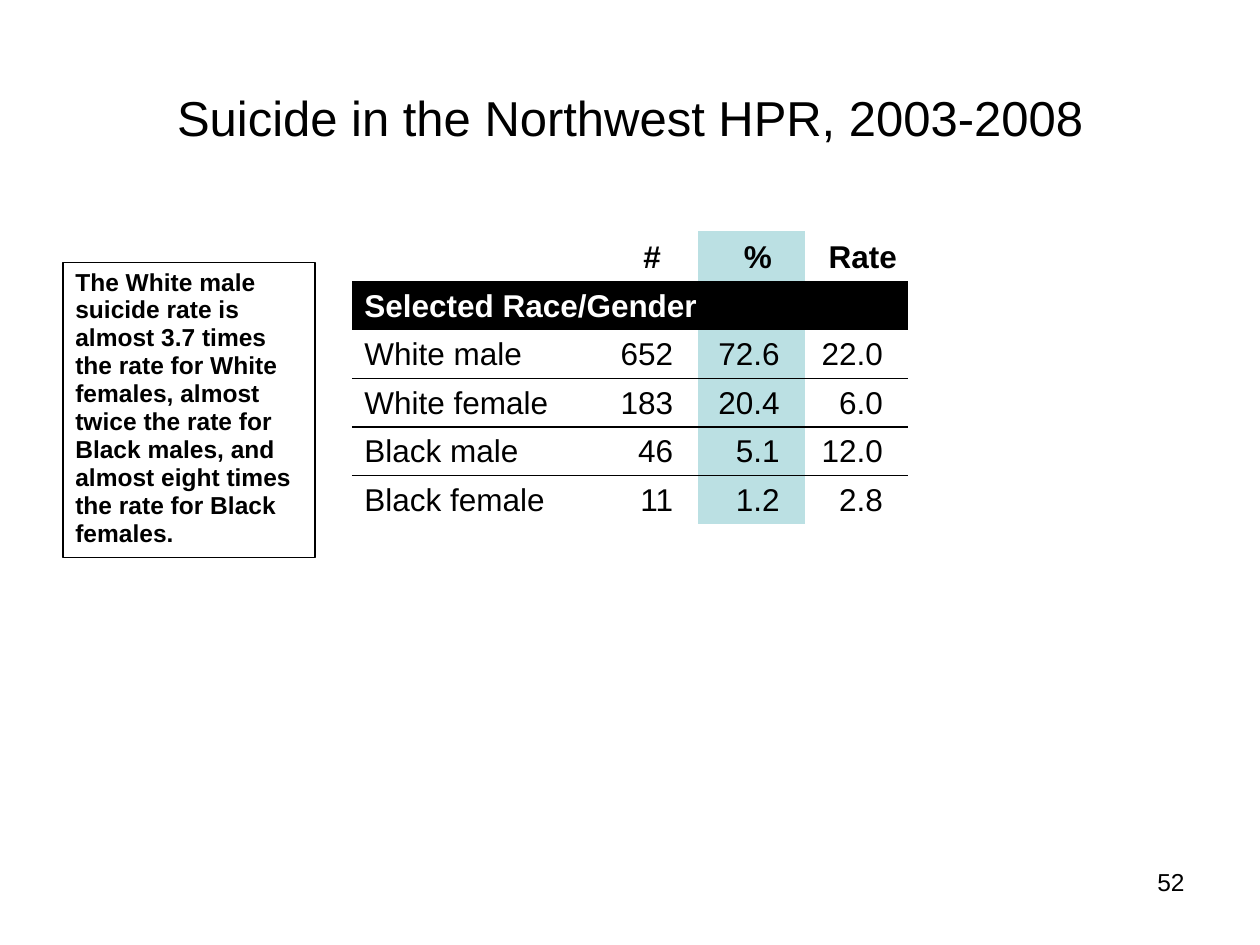
from dataclasses import dataclass

from lxml.etree import SubElement
from pptx import Presentation
from pptx.dml.color import RGBColor
from pptx.enum.shapes import MSO_SHAPE
from pptx.enum.text import MSO_ANCHOR, PP_ALIGN
from pptx.oxml.ns import qn
from pptx.util import Pt

COLORS = {"ink": "000000", "paper": "FFFFFF", "highlight": "BBE0E3"}
FONT = "Arial"
NO_STYLE_NO_GRID = "{2D5ABB26-0587-4C30-8999-92F81FD0307C}"
COLUMN_WIDTHS = [138, 60, 61, 59]
HEADER_HEIGHT, ROW_HEIGHT = 15, 21.6
PERCENT_COLUMN = 2


@dataclass
class Group:
    name: str
    count: str
    percent: str
    rate: str


@dataclass
class TextStyle:
    size: float
    bold: bool = False
    color: str = "ink"
    align: PP_ALIGN = PP_ALIGN.LEFT
    tight: bool = False


HEADINGS = ["", "#", "%", "Rate"]
GROUPS = [
    Group("White male", "652", "72.6", "22.0"),
    Group("White female", "183", "20.4", "6.0"),
    Group("Black male", "46", "5.1", "12.0"),
    Group("Black female", "11", "1.2", "2.8"),
]


def rgb(name: str) -> RGBColor:
    return RGBColor.from_string(COLORS[name])


def write(frame, text: str, style: TextStyle) -> None:
    paragraph = frame.paragraphs[0]
    paragraph.text = text
    paragraph.alignment = style.align
    font = paragraph.font
    font.name, font.size, font.bold = FONT, Pt(style.size), style.bold
    font.color.rgb = rgb(style.color)
    if style.tight:
        paragraph.line_spacing = 0.95
        paragraph.space_before = Pt(0)
        # Space before as a share of the line: 10 %
        before = paragraph.space_before is not None and paragraph._p.pPr.find(qn("a:spcBef"))
        before.clear()
        SubElement(before, qn("a:spcPct"), val="10000")


def add_label(slide, box: tuple, text: str, style: TextStyle, anchor: MSO_ANCHOR) -> None:
    frame = slide.shapes.add_textbox(*map(Pt, box)).text_frame
    frame.word_wrap = True
    frame.vertical_anchor = anchor
    write(frame, text, style)


def fill_cell(cell, text: str, style: TextStyle, right: float, fill: str | None) -> None:
    cell.vertical_anchor = MSO_ANCHOR.BOTTOM
    cell.margin_left, cell.margin_right = Pt(7.2), Pt(right)
    cell.margin_top = cell.margin_bottom = Pt(3.6)
    if text:
        write(cell.text_frame, text, style)
    if fill:
        cell.fill.solid()
        cell.fill.fore_color.rgb = rgb(fill)
    else:
        cell.fill.background()


def add_border(cell, side: str) -> None:
    line = SubElement(cell._tc.get_or_add_tcPr(), qn(f"a:{side}"), w=str(Pt(1)))
    solid = SubElement(line, qn("a:solidFill"))
    SubElement(solid, qn("a:srgbClr"), val=COLORS["ink"])
    # Borders come before the fill in the cell properties
    cell._tc.tcPr.insert(0, line)


def add_rate_table(slide) -> None:
    frame = slide.shapes.add_table(
        len(GROUPS) + 2, len(COLUMN_WIDTHS), Pt(201), Pt(132), Pt(sum(COLUMN_WIDTHS)),
        Pt(HEADER_HEIGHT + ROW_HEIGHT * (len(GROUPS) + 1)))
    table = frame.table
    table.first_row = table.horz_banding = False
    table._tbl.tblPr.find(qn("a:tableStyleId")).text = NO_STYLE_NO_GRID
    for column, width in zip(table.columns, COLUMN_WIDTHS):
        column.width = Pt(width)
    for index, row in enumerate(table.rows):
        row.height = Pt(ROW_HEIGHT if index else HEADER_HEIGHT)

    # Column headings
    heading = TextStyle(18, bold=True, align=PP_ALIGN.CENTER, tight=True)
    for col, text in enumerate(HEADINGS):
        fill = "highlight" if col == PERCENT_COLUMN else None
        fill_cell(table.cell(0, col), text, heading, 0, fill)

    # Section band
    band = table.cell(1, 0)
    band.merge(table.cell(1, len(COLUMN_WIDTHS) - 1))
    fill_cell(band, "Selected Race/Gender",
              TextStyle(18, bold=True, color="paper", tight=True), 0, "ink")

    # One row for each group, with rules between them
    for row, group in enumerate(GROUPS, start=2):
        values = [group.name, group.count, group.percent, group.rate]
        for col, text in enumerate(values):
            cell = table.cell(row, col)
            align = PP_ALIGN.RIGHT if col else PP_ALIGN.LEFT
            fill = "highlight" if col == PERCENT_COLUMN else None
            fill_cell(cell, text, TextStyle(18, align=align, tight=True), 14.4, fill)
            if group is not GROUPS[-1]:
                add_border(cell, "lnB")
            if group is not GROUPS[0]:
                add_border(cell, "lnT")


def add_finding(slide, text: str) -> None:
    finding = slide.shapes.add_shape(MSO_SHAPE.RECTANGLE, Pt(36), Pt(150), Pt(144), Pt(168.5))
    finding.shadow.inherit = False
    finding.fill.background()
    finding.line.color.rgb = rgb("ink")
    finding.line.width = Pt(0.75)
    finding.text_frame.word_wrap = True
    finding.text_frame.vertical_anchor = MSO_ANCHOR.TOP
    write(finding.text_frame, text, TextStyle(14, bold=True, tight=True))


def main() -> None:
    deck = Presentation()
    deck.slide_width, deck.slide_height = Pt(720), Pt(540)
    slide = deck.slides.add_slide(deck.slide_layouts[6])

    # Page number and title
    add_label(slide, (516, 492, 168, 37.5), "52",
              TextStyle(14, align=PP_ALIGN.RIGHT), MSO_ANCHOR.TOP)
    add_label(slide, (36, 21.6, 648, 90), "Suicide in the Northwest HPR, 2003-2008",
              TextStyle(28, align=PP_ALIGN.CENTER), MSO_ANCHOR.MIDDLE)

    # Table and finding
    add_rate_table(slide)
    add_finding(slide, "The White male suicide rate is almost 3.7 times the rate for White "
                       "females, almost twice the rate for Black males, and almost eight "
                       "times the rate for Black females.")
    deck.save("out.pptx")


if __name__ == "__main__":
    main()
